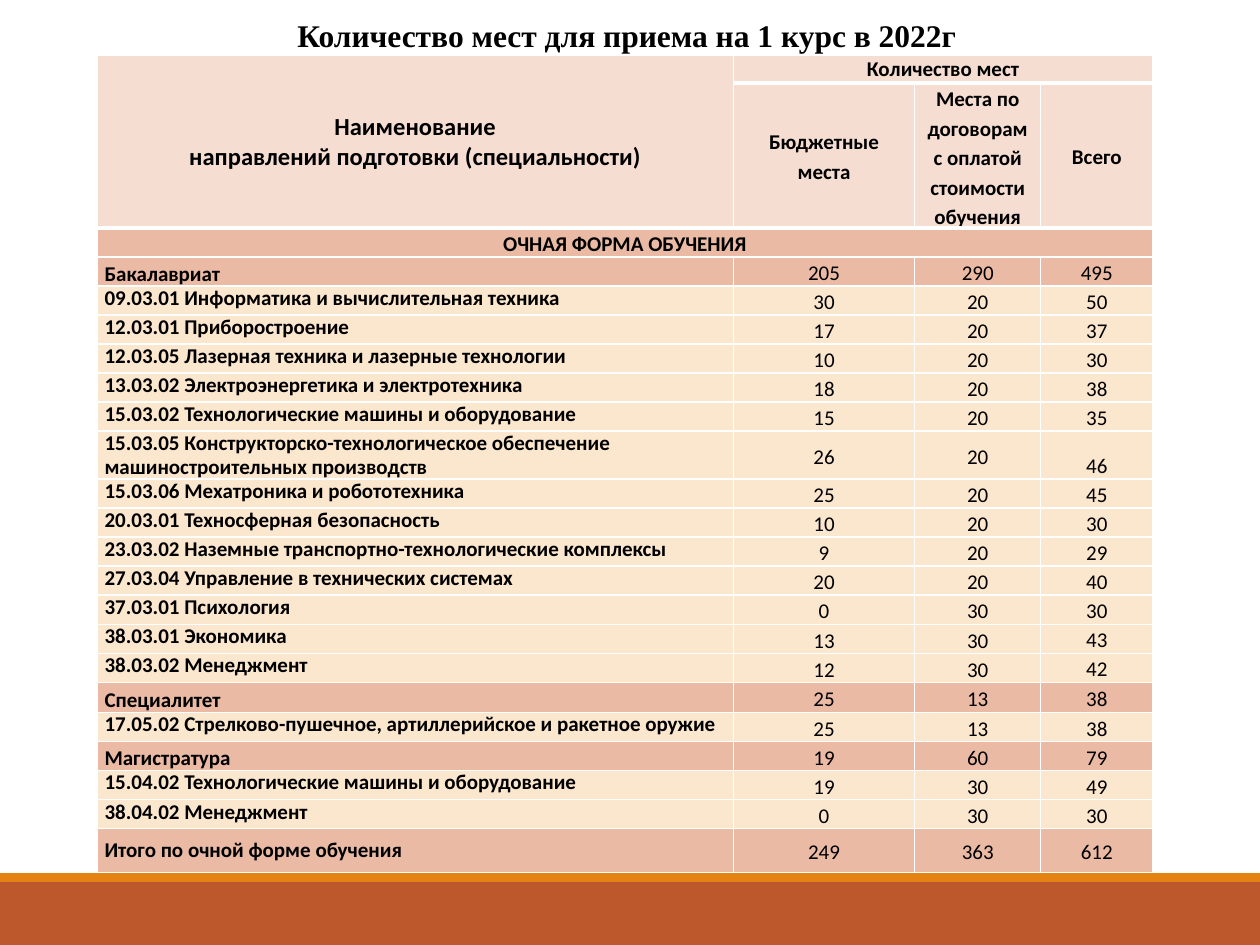
from pptx import Presentation
from pptx.dml.color import RGBColor
from pptx.enum.shapes import MSO_SHAPE
from pptx.enum.text import MSO_ANCHOR, MSO_AUTO_SIZE, PP_ALIGN
from pptx.oxml import parse_xml
from pptx.oxml.ns import nsdecls
from pptx.util import Inches, Pt

RECT = MSO_SHAPE.RECTANGLE
TOP, MID, LOW = MSO_ANCHOR.TOP, MSO_ANCHOR.MIDDLE, MSO_ANCHOR.BOTTOM
LEFT, MIDST = PP_ALIGN.LEFT, PP_ALIGN.CENTER
GROW = MSO_AUTO_SIZE.SHAPE_TO_FIT_TEXT

BLACK = RGBColor(0, 0, 0)
RUST = RGBColor(0xBD, 0x58, 0x2C)
AMBER = RGBColor(0xE4, 0x83, 0x12)
PINK = RGBColor(0xF5, 0xDD, 0xD2)
ROSE = RGBColor(0xEA, 0xBA, 0xA5)
CREAM = RGBColor(0xFB, 0xE6, 0xCE)

# Content
TITLE = "Количество мест для приема на 1 курс в 2022г"
NAME = "Наименование\nнаправлений подготовки (специальности)"
SEATS = "Количество мест"
HEADS = ["Бюджетные места", "Места по договорам с оплатой стоимости обучения", "Всего"]
FORM = "ОЧНАЯ ФОРМА ОБУЧЕНИЯ"
# kind, label, budget seats, paid seats, total, row height
ROWS = [
    ("level", "Бакалавриат", 205, 290, 495, 0.23),
    ("course", "09.03.01 Информатика и вычислительная техника", 30, 20, 50, 0.21),
    ("course", "12.03.01 Приборостроение", 17, 20, 37, 0.21),
    ("course", "12.03.05 Лазерная техника и лазерные технологии", 10, 20, 30, 0.21),
    ("course", "13.03.02 Электроэнергетика и электротехника", 18, 20, 38, 0.21),
    ("course", "15.03.02 Технологические машины и оборудование", 15, 20, 35, 0.21),
    ("course", "15.03.05 Конструкторско-технологическое обеспечение "
     "машиностроительных производств", 26, 20, 46, 0.35),
    ("course", "15.03.06 Мехатроника и робототехника", 25, 20, 45, 0.21),
    ("course", "20.03.01 Техносферная безопасность", 10, 20, 30, 0.21),
    ("course", "23.03.02 Наземные транспортно-технологические комплексы", 9, 20, 29, 0.21),
    ("course", "27.03.04 Управление в технических системах", 20, 20, 40, 0.21),
    ("course", "37.03.01 Психология", 0, 30, 30, 0.21),
    ("course", "38.03.01 Экономика", 13, 30, 43, 0.21),
    ("course", "38.03.02 Менеджмент", 12, 30, 42, 0.21),
    ("level", "Специалитет", 25, 13, 38, 0.24),
    ("course", "17.05.02 Стрелково-пушечное, артиллерийское и ракетное оружие",
     25, 13, 38, 0.21),
    ("level", "Магистратура", 19, 60, 79, 0.21),
    ("course", "15.04.02 Технологические машины и оборудование", 19, 30, 49, 0.21),
    ("course", "38.04.02 Менеджмент", 0, 30, 30, 0.21),
    ("sum", "Итого по очной форме обучения", 249, 363, 612, 0.35),
]
# Fill and the anchor of each column, by kind of row
KINDS = {
    "level": (ROSE, (LOW, LOW, LOW, LOW)),
    "course": (CREAM, (TOP, MID, MID, LOW)),
    "sum": (ROSE, (MID, MID, MID, MID)),
}
COLS = [5.05, 1.44, 1, 0.89]
TALL = [0.22, 1.15, 0.21] + [row[-1] for row in ROWS]
HEAD = 2  # number of header rows


def style(font, **extra):
    form = {"name": "Calibri", "size": Pt(12), "bold": True} | extra
    for key, val in form.items():
        setattr(font, key, val)
    font.color.rgb = BLACK


def frame(cell, row):
    """White borders, thick under each header row."""
    wide = {"L": 1, "R": 1, "T": 3 if 0 < row <= HEAD else 1,
            "B": 3 if row < HEAD else 1}
    prop = cell._tc.get_or_add_tcPr()
    for side, size in wide.items():
        prop.append(parse_xml(
            f'<a:ln{side} {nsdecls("a")} w="{Pt(size)}"><a:solidFill>'
            f'<a:srgbClr val="FFFFFF"/></a:solidFill></a:ln{side}>'))


def put(cell, text, fill, anchor=MID, align=MIDST, space=1.15, **extra):
    cell.fill.solid()
    cell.fill.fore_color.rgb = fill
    cell.vertical_anchor = anchor
    cell.text = text
    for para in cell.text_frame.paragraphs:
        para.alignment = align
        para.line_spacing = space
        for run in para.runs:
            style(run.font, **extra)


deck = Presentation()
deck.slide_width, deck.slide_height = Inches(10), Inches(7.5)
slide = deck.slides.add_slide(deck.slide_layouts[5])

# Bottom bands
for y, high, color in [(7, 0.5, RUST), (6.93, 0.07, AMBER)]:
    band = slide.shapes.add_shape(RECT, 0, Inches(y), deck.slide_width, Inches(high))
    band.shadow.inherit = False
    band.fill.solid()
    band.fill.fore_color.rgb = color
    band.line.fill.background()

# Title
title = slide.shapes.title
title.left, title.top = Inches(2.26), Inches(0.08)
title.width, title.height = Inches(5.49), Inches(0.71)
text = title.text_frame
text.text = TITLE
text.word_wrap = False
text.auto_size = GROW
text.vertical_anchor = TOP
text.paragraphs[0].alignment = LEFT
style(text.paragraphs[0].runs[0].font, name="Times New Roman", size=Pt(18))

# Table grid
holder = slide.shapes.add_table(len(TALL), len(COLS), Inches(0.77), Inches(0.44),
                                Inches(sum(COLS)), Inches(sum(TALL)))
table = holder.table
table.first_row = table.horz_banding = False
for col, wide in zip(table.columns, COLS):
    col.width = Inches(wide)
for r, high in enumerate(TALL):
    table.rows[r].height = Inches(high)
    for cell in table.rows[r].cells:
        cell.margin_left = cell.margin_right = Inches(0.06)
        cell.margin_top = cell.margin_bottom = 0
        frame(cell, r)
holder.height = Inches(6.48)

# Header rows
table.cell(0, 0).merge(table.cell(1, 0))
table.cell(0, 1).merge(table.cell(0, 3))
table.cell(2, 0).merge(table.cell(2, 3))
put(table.cell(0, 0), NAME, PINK, space=1, size=Pt(14))
put(table.cell(0, 1), SEATS, PINK, space=1)
for c, head in enumerate(HEADS, 1):
    put(table.cell(1, c), head, PINK)
put(table.cell(2, 0), FORM, ROSE, TOP)

# Body rows
for r, (kind, label, *seats, high) in enumerate(ROWS, HEAD + 1):
    fill, anchors = KINDS[kind]
    put(table.cell(r, 0), label, fill, anchors[0], LEFT, 0.95)
    for c, seat in enumerate(seats, 1):
        put(table.cell(r, c), str(seat), fill, anchors[c], bold=False)

deck.save("out.pptx")
